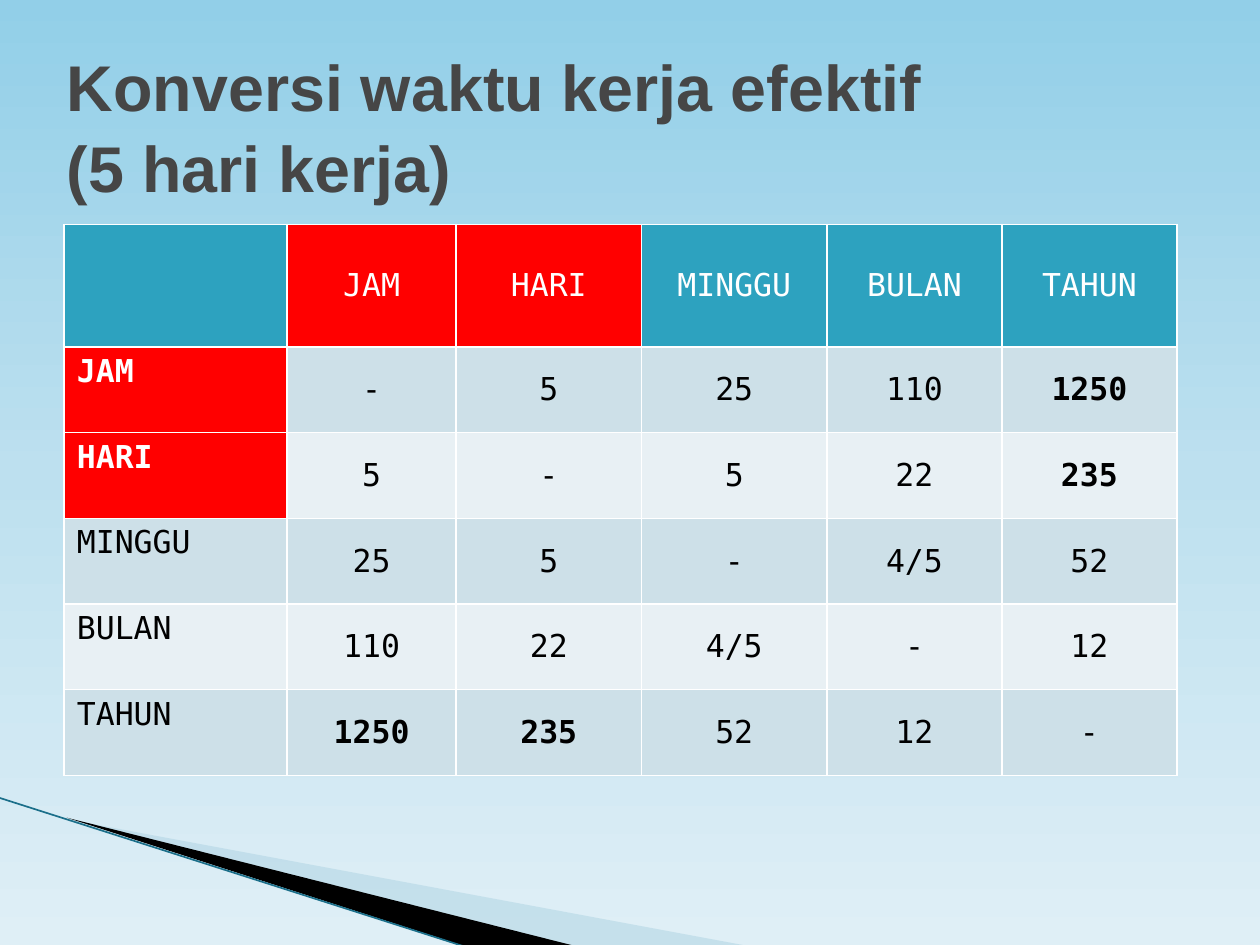
from copy import deepcopy
from dataclasses import dataclass

from lxml import etree
from pptx import Presentation
from pptx.dml.color import RGBColor
from pptx.enum.shapes import MSO_CONNECTOR
from pptx.enum.text import MSO_ANCHOR, MSO_AUTO_SIZE, PP_ALIGN
from pptx.oxml.ns import qn
from pptx.util import Pt

STRAIGHT = MSO_CONNECTOR.STRAIGHT
TOP, MIDDLE = MSO_ANCHOR.TOP, MSO_ANCHOR.MIDDLE
LEFT, CENTER = PP_ALIGN.LEFT, PP_ALIGN.CENTER
NO_AUTO_SIZE = MSO_AUTO_SIZE.NONE

WHITE, BLACK, RED, TEAL = "FFFFFF", "000000", "FF0000", "2DA2BF"
BAND_COLORS = ("CDE0E8", "E8F0F4")
BACKGROUND_STOPS = ((0, "92CFE8"), (0.5, "BDE0EF"), (1, "DFEFF6"))

UNITS = ("JAM", "HARI", "MINGGU", "BULAN", "TAHUN")
HIGHLIGHTED_UNITS = ("JAM", "HARI")
BOLD_VALUES = ("1250", "235")
CONVERSIONS = (
    ("-", "5", "25", "110", "1250"),
    ("5", "-", "5", "22", "235"),
    ("25", "5", "-", "4/5", "52"),
    ("110", "22", "4/5", "-", "12"),
    ("1250", "235", "52", "12", "-"),
)
COLUMN_WIDTHS = (127.4, 96.5, 106, 106, 100, 100)
HEADER_HEIGHT, ROW_HEIGHT = 70, 49


@dataclass
class Wedge:
    points: tuple[tuple[float, float], ...]
    color: str
    opacity: int = 100


@dataclass
class CellStyle:
    fill: str
    color: str = BLACK
    bold: bool = False
    align: PP_ALIGN = CENTER
    anchor: MSO_ANCHOR = MIDDLE


WEDGES = (
    Wedge(((39.6, 468.4), (428.4, 540.7), (328.3, 540.7)), "A0CBDC", 40),
    Wedge(((38.2, 467.3), (329, 540.7), (267.8, 541.4)), BLACK),
)


def rgb(color: str) -> RGBColor:
    return RGBColor.from_string(color)


def set_background(slide) -> None:
    fill = slide.background.fill
    fill.gradient()
    fill.gradient_angle = 270
    stop_list = slide.element.xpath(".//a:gsLst")[0]
    stop_list.append(deepcopy(stop_list[0]))
    for stop, (position, color) in zip(fill.gradient_stops, BACKGROUND_STOPS):
        stop.position = position
        stop.color.rgb = rgb(color)


def draw_wedge(slide, wedge: Wedge) -> None:
    start, *others = [(Pt(x), Pt(y)) for x, y in wedge.points]
    builder = slide.shapes.build_freeform(*start)
    builder.add_line_segments(others, close=True)
    shape = builder.convert_to_shape()
    shape.shadow.inherit = False
    shape.line.fill.background()
    shape.fill.solid()
    shape.fill.fore_color.rgb = rgb(wedge.color)
    if wedge.opacity < 100:
        color_element = shape.element.spPr.find(qn("a:solidFill"))[0]
        alpha = etree.SubElement(color_element, qn("a:alpha"))
        alpha.set("val", str(wedge.opacity * 1000))


def draw_edge_line(slide) -> None:
    line = slide.shapes.add_connector(
        STRAIGHT, Pt(-0.7), Pt(455.8), Pt(267.1), Pt(541.4))
    line.line.color.rgb = rgb("1B6F8A")
    line.line.width = Pt(0.95)
    etree.SubElement(line.element.spPr, qn("a:effectLst"))


def write_title(slide) -> None:
    title = slide.shapes.title
    title.left, title.top, title.width, title.height = (
        Pt(31), Pt(26), Pt(570), Pt(90))
    frame = title.text_frame
    frame.text = "Konversi waktu kerja efektif\v(5 hari kerja)"
    frame.word_wrap = True
    frame.auto_size = NO_AUTO_SIZE
    frame.vertical_anchor = MIDDLE
    paragraph = frame.paragraphs[0]
    paragraph.alignment = LEFT
    paragraph.line_spacing = 1.05
    for run in paragraph.runs:
        run.font.name = "Arial"
        run.font.size = Pt(36.9)
        run.font.bold = True
        run.font.color.rgb = rgb("464646")


def add_borders(cell) -> None:
    properties = cell._tc.get_or_add_tcPr()
    for side in ("lnL", "lnR", "lnT", "lnB"):
        border = etree.SubElement(properties, qn(f"a:{side}"), w=str(Pt(1)))
        fill = etree.SubElement(border, qn("a:solidFill"))
        etree.SubElement(fill, qn("a:srgbClr"), val=WHITE)


def fill_cell(cell, text: str, style: CellStyle) -> None:
    add_borders(cell)
    cell.fill.solid()
    cell.fill.fore_color.rgb = rgb(style.fill)
    cell.vertical_anchor = style.anchor
    cell.text = text
    paragraph = cell.text_frame.paragraphs[0]
    paragraph.alignment = style.align
    for run in paragraph.runs:
        run.font.name = "DejaVu Sans Mono"
        run.font.size = Pt(18)
        run.font.bold = style.bold
        run.font.color.rgb = rgb(style.color)


def draw_conversion_table(slide) -> None:
    row_count, column_count = len(UNITS) + 1, len(COLUMN_WIDTHS)
    table = slide.shapes.add_table(
        row_count, column_count, Pt(36.7), Pt(128.2),
        Pt(sum(COLUMN_WIDTHS)), Pt(HEADER_HEIGHT + len(UNITS) * ROW_HEIGHT)).table
    for column, width in zip(table.columns, COLUMN_WIDTHS):
        column.width = Pt(width)
    for index, row in enumerate(table.rows):
        row.height = Pt(ROW_HEIGHT if index else HEADER_HEIGHT)

    for column, unit in enumerate(("", *UNITS)):
        fill = RED if unit in HIGHLIGHTED_UNITS else TEAL
        fill_cell(table.cell(0, column), unit, CellStyle(fill, WHITE))

    for row, (unit, values) in enumerate(zip(UNITS, CONVERSIONS), start=1):
        band = BAND_COLORS[(row - 1) % 2]
        if unit in HIGHLIGHTED_UNITS:
            label_style = CellStyle(RED, WHITE, True, LEFT, TOP)
        else:
            label_style = CellStyle(band, align=LEFT, anchor=TOP)
        fill_cell(table.cell(row, 0), unit, label_style)
        for column, value in enumerate(values, start=1):
            style = CellStyle(band, bold=value in BOLD_VALUES)
            fill_cell(table.cell(row, column), value, style)


def main() -> None:
    presentation = Presentation()
    presentation.slide_width, presentation.slide_height = Pt(720), Pt(540)
    slide = presentation.slides.add_slide(presentation.slide_layouts[5])
    set_background(slide)
    for wedge in WEDGES:
        draw_wedge(slide, wedge)
    draw_edge_line(slide)
    write_title(slide)
    draw_conversion_table(slide)
    presentation.save("out.pptx")


if __name__ == "__main__":
    main()
